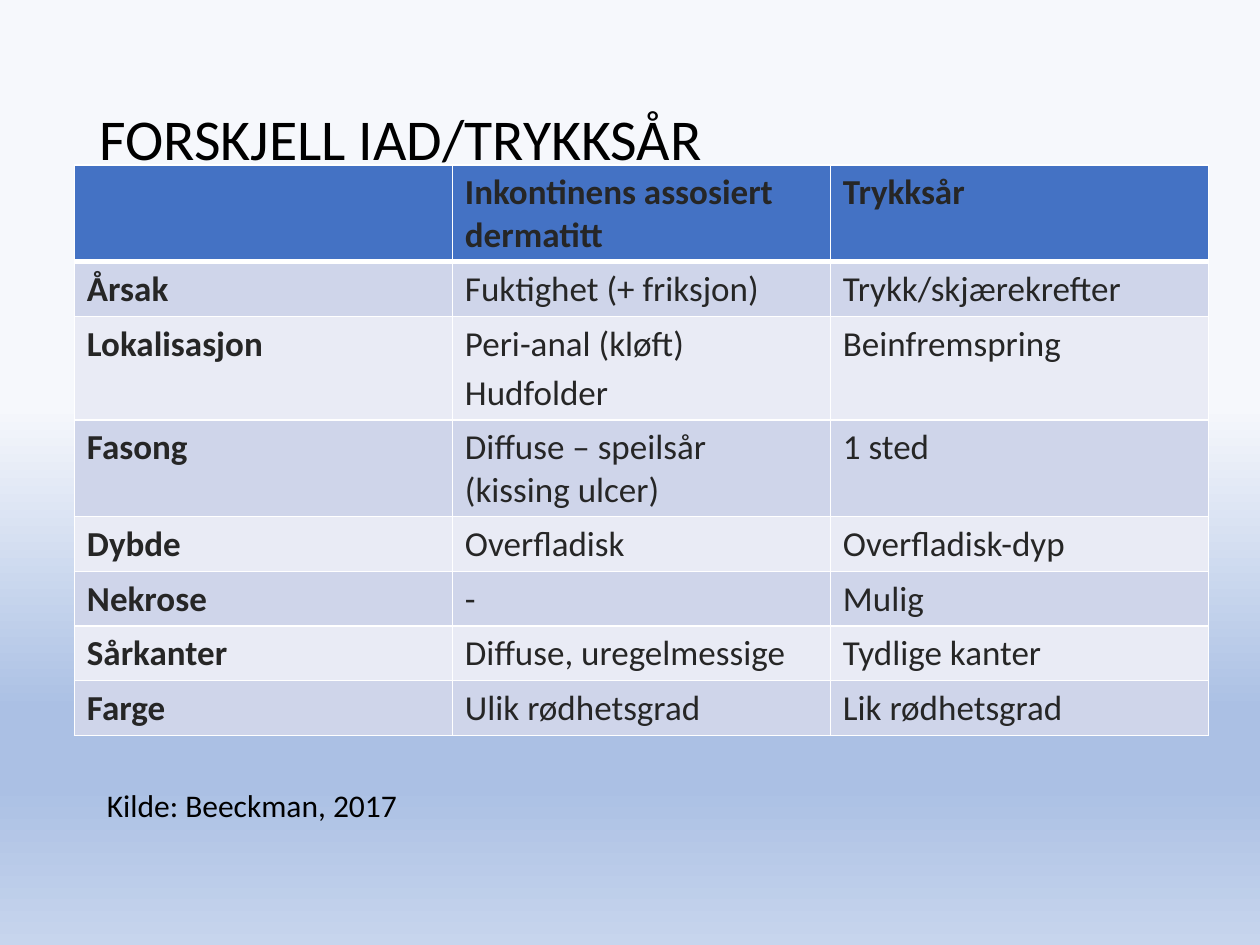
from dataclasses import dataclass

from lxml import etree
from pptx import Presentation
from pptx.dml.color import RGBColor
from pptx.enum.text import MSO_ANCHOR
from pptx.oxml.ns import qn
from pptx.util import Inches, Pt

MIDDLE = MSO_ANCHOR.MIDDLE
TOP = MSO_ANCHOR.TOP
FONT = "Calibri"
BLACK, DARK, WHITE = "000000", "262626", "FFFFFF"
HEADER_FILL = "4472C4"
BAND_FILLS = ("E9EBF5", "CFD5EA")
BACKGROUND_STOPS = ((43, "F6F8FC"), (75, "ABC0E4"), (83, "ABC0E4"), (100, "C7D5ED"))
ROW_HEIGHT = Inches(0.41)
COLUMN_WIDTH = Inches(3)

ROWS = (
    ("", "Inkontinens assosiert dermatitt", "Trykksår"),
    ("Årsak", "Fuktighet (+ friksjon)", "Trykk/skjærekrefter"),
    ("Lokalisasjon", "Peri-anal (kløft)\nHudfolder", "Beinfremspring"),
    ("Fasong", "Diffuse – speilsår (kissing ulcer)", "1 sted"),
    ("Dybde", "Overfladisk", "Overfladisk-dyp"),
    ("Nekrose", "-", "Mulig"),
    ("Sårkanter", "Diffuse, uregelmessige", "Tydlige kanter"),
    ("Farge", "Ulik rødhetsgrad", "Lik rødhetsgrad"),
)


@dataclass
class Label:
    text: str
    left: float
    top: float
    width: float
    height: float
    size: int
    anchor: MSO_ANCHOR
    line_spacing: float


TITLE = Label("FORSKJELL IAD/TRYKKSÅR", 0.69, 0.4, 8.62, 1.45, 33, MIDDLE, 0.9)
SOURCE = Label("Kilde: Beeckman, 2017", 0.75, 6.19, 2.76, 0.4, 18, TOP, 1.0)


def color(value: str) -> RGBColor:
    return RGBColor.from_string(value)


def style_paragraph(paragraph, size: int, font_color: str, bold: bool = False) -> None:
    font = paragraph.font
    font.name = FONT
    font.size = Pt(size)
    font.bold = bold
    font.color.rgb = color(font_color)


def paint_background(slide) -> None:
    fill = slide.background.fill
    fill.gradient()
    fill.gradient_angle = 270
    stops = slide.element.find(".//" + qn("a:gsLst"))
    for stop in list(stops):
        stops.remove(stop)
    for position, value in BACKGROUND_STOPS:
        stop = etree.SubElement(stops, qn("a:gs"), pos=str(position * 1000))
        etree.SubElement(stop, qn("a:srgbClr"), val=value)


def add_label(slide, label: Label) -> None:
    box = slide.shapes.add_textbox(
        Inches(label.left), Inches(label.top), Inches(label.width), Inches(label.height)
    )
    frame = box.text_frame
    frame.word_wrap = True
    frame.vertical_anchor = label.anchor
    paragraph = frame.paragraphs[0]
    paragraph.text = label.text
    paragraph.line_spacing = label.line_spacing
    style_paragraph(paragraph, label.size, BLACK)


def add_borders(cell, top: int, bottom: int) -> None:
    """Draw white borders; top and bottom are widths in points."""
    properties = cell._tc.get_or_add_tcPr()
    for tag, width in (("lnL", 1), ("lnR", 1), ("lnT", top), ("lnB", bottom)):
        line = etree.SubElement(properties, qn(f"a:{tag}"), w=str(Pt(width)))
        fill = etree.SubElement(line, qn("a:solidFill"))
        etree.SubElement(fill, qn("a:srgbClr"), val=WHITE)


def fill_cell(cell, text: str, row: int, column: int) -> None:
    add_borders(cell, top=3 if row == 1 else 1, bottom=3 if row == 0 else 1)
    cell.fill.solid()
    cell.fill.fore_color.rgb = color(HEADER_FILL if row == 0 else BAND_FILLS[row % 2])
    cell.text = text
    for index, paragraph in enumerate(cell.text_frame.paragraphs):
        if index > 0:
            paragraph.space_before = Pt(4)
        style_paragraph(paragraph, 20, DARK, bold=row == 0 or column == 0)


def add_comparison_table(slide) -> None:
    frame = slide.shapes.add_table(
        len(ROWS), len(ROWS[0]), Inches(0.59), Inches(1.31), Inches(9), Inches(4.53)
    )
    table = frame.table
    for column in table.columns:
        column.width = COLUMN_WIDTH
    for row in table.rows:
        row.height = ROW_HEIGHT
    frame.height = Inches(4.53)
    for row, texts in enumerate(ROWS):
        for column, text in enumerate(texts):
            fill_cell(table.cell(row, column), text, row, column)


def main() -> None:
    presentation = Presentation()
    presentation.slide_width = Inches(10)
    presentation.slide_height = Inches(7.5)
    slide = presentation.slides.add_slide(presentation.slide_layouts[6])
    paint_background(slide)
    add_label(slide, TITLE)
    add_comparison_table(slide)
    add_label(slide, SOURCE)
    presentation.save("out.pptx")


if __name__ == "__main__":
    main()
